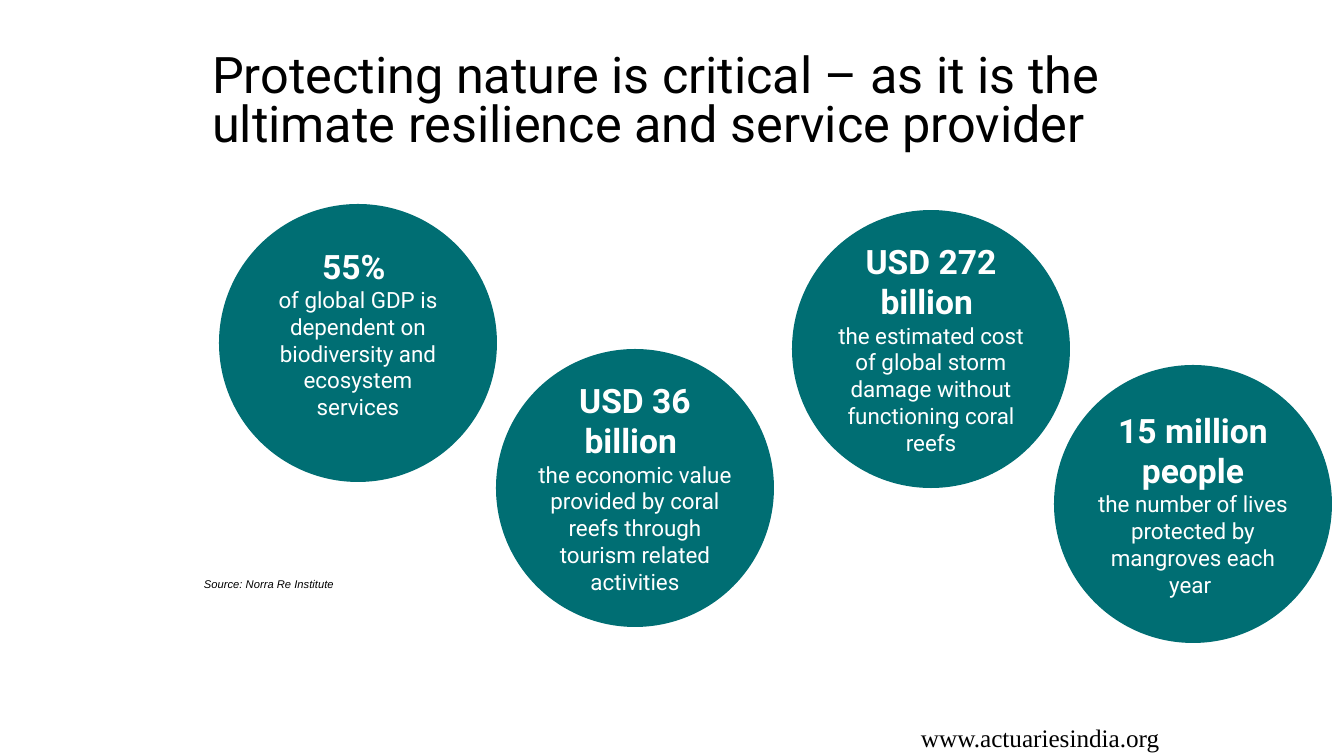
import pptx
import pptx.util
import pptx.dml.color
import pptx.enum.shapes
import pptx.enum.text

RGBColor = pptx.dml.color.RGBColor
TEAL = RGBColor(0x00, 0x6E, 0x73)
WHITE = RGBColor(0xFF, 0xFF, 0xFF)
BLACK = RGBColor(0x00, 0x00, 0x00)

PX = 914400 / 100.8
DIAMETER = 278

# left, top, inset above the text, inset below, figure, explanation
FACTS = [
    (219, 204, 46, 66, "55% ",
     "of global GDP is dependent on biodiversity and ecosystem services"),
    (496, 349, 38, 39, "USD 36 billion ",
     "the economic value provided by coral reefs through tourism related activities"),
    (792, 210, 38, 39, "USD 272 billion ",
     "the estimated cost of global storm damage without functioning coral reefs"),
    (1054, 365, 38, 39, "15 million people",
     "the number of lives protected by mangroves each year "),
]


def px(length):
    return pptx.util.Emu(round(length * PX))


def add_span(para, text, size, font="Roboto", color=BLACK, bold=False, italic=False):
    span = para.add_run()
    span.text = text
    span.font.name = font
    span.font.size = pptx.util.Pt(size)
    span.font.bold = bold
    span.font.italic = italic
    span.font.color.rgb = color


def place_title(page, left, top, width, height):
    title = page.shapes.title
    title.left, title.top, title.width, title.height = map(px, (left, top, width, height))
    frame = title.text_frame
    frame.word_wrap = True
    frame.auto_size = pptx.enum.text.MSO_AUTO_SIZE.NONE
    frame.vertical_anchor = pptx.enum.text.MSO_ANCHOR.TOP
    para = frame.paragraphs[0]
    para.alignment = pptx.enum.text.PP_ALIGN.LEFT
    para.line_spacing = 0.8
    add_span(para, "Protecting nature is critical – as it is the "
                   "ultimate resilience and service provider", 36)


def add_fact_circle(page, left, top, above, below, figure, explanation):
    circle = page.shapes.add_shape(
        pptx.enum.shapes.MSO_SHAPE.OVAL, px(left), px(top), px(DIAMETER), px(DIAMETER))
    circle.shadow.inherit = False
    circle.fill.solid()
    circle.fill.fore_color.rgb = TEAL
    circle.line.fill.background()
    frame = circle.text_frame
    frame.word_wrap = True
    frame.vertical_anchor = pptx.enum.text.MSO_ANCHOR.MIDDLE
    frame.margin_left = frame.margin_right = 0
    frame.margin_top, frame.margin_bottom = px(above), px(below)
    heading, detail = frame.paragraphs[0], frame.add_paragraph()
    heading.alignment = detail.alignment = pptx.enum.text.PP_ALIGN.CENTER
    add_span(heading, figure, 24, color=WHITE, bold=True)
    add_span(detail, explanation, 16, color=WHITE)


def add_note(page, left, top, width, height, text, size, font, italic=False):
    box = page.shapes.add_textbox(px(left), px(top), px(width), px(height))
    box.text_frame.word_wrap = True
    add_span(box.text_frame.paragraphs[0], text, size, font, italic=italic)


def build_nature_page(deck):
    page = deck.slides.add_slide(deck.slide_layouts[5])
    # Title
    place_title(page, 202, 50, 975, 87)
    # Web address
    add_note(page, 911, 717, 320, 40, "www.actuariesindia.org", 18, "Times New Roman")
    # Facts
    for fact in FACTS:
        add_fact_circle(page, *fact)
    # Source
    add_note(page, 194, 572, 260, 24, "Source: Norra Re Institute", 8, "Arial", italic=True)


def main():
    deck = pptx.Presentation()
    deck.slide_width, deck.slide_height = px(1344), px(756)
    build_nature_page(deck)
    deck.save("out.pptx")


if __name__ == "__main__":
    main()
